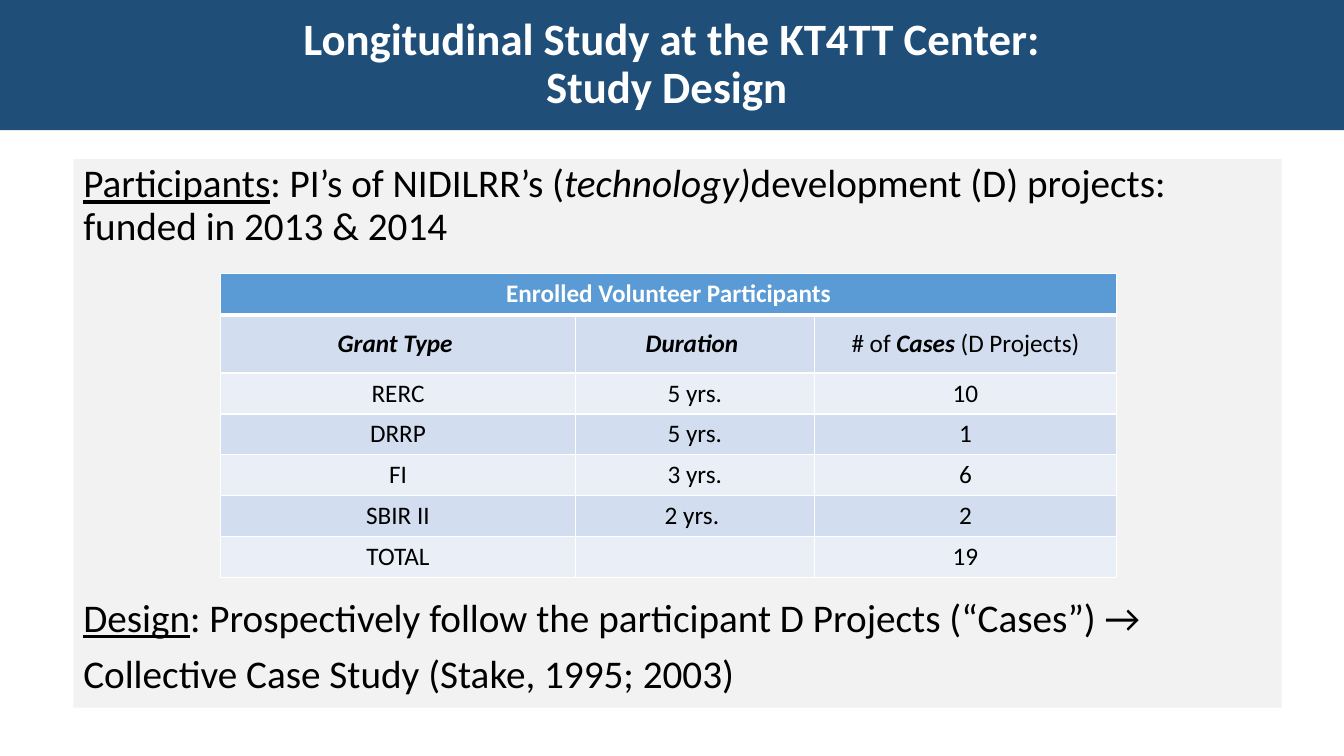
from lxml.etree import SubElement
from pptx import Presentation
from pptx.dml.color import RGBColor
from pptx.enum.shapes import MSO_SHAPE
from pptx.enum.text import MSO_ANCHOR, PP_ALIGN
from pptx.oxml.ns import qn
from pptx.util import Cm, Pt

FONT = "Calibri"
WHITE, BLACK = "FFFFFF", "000000"
BANDS = ["EAEFF7", "D2DEEF"]
COLS = [8.94, 6.02, 7.62]
HEADS = [
    [("Grant Type ", "bi")],
    [("Duration ", "bi")],
    [("# of ", ""), ("Cases ", "bi"), ("(D Projects)", "")],
]
GRANTS = [
    ("RERC", "5 yrs.", "10"),
    ("DRRP", "5 yrs.", "1"),
    ("FI", "3 yrs.", "6"),
    ("SBIR II", "2 yrs. ", "2"),
    ("TOTAL", "", "19"),
]
NOTES = [
    (0, [("Participants", "u"), (": PI’s of NIDILRR’s (", ""),
         ("technology)", "i"),
         ("development (D) projects: funded in 2013 & 2014", "")]),
    (250, [("Design", "u"),
           (": Prospectively follow the participant D Projects (“Cases”) →", "")]),
    (10, [("Collective Case Study (Stake, 1995; 2003)", "")]),
]


def color(code):
    return RGBColor.from_string(code)


def paint(item, code):
    item.fill.solid()
    item.fill.fore_color.rgb = color(code)


def style(run, size, code, marks):
    font = run.font
    font.name, font.size = FONT, Pt(size)
    font.color.rgb = color(code)
    font.bold = "b" in marks
    font.italic = "i" in marks
    font.underline = "u" in marks


def write(para, parts, size, code, align):
    para.alignment = align
    for text, marks in parts:
        run = para.add_run()
        run.text = text
        style(run, size, code, marks)


def add_box(slide, left, top, width, height, fill, anchor):
    box = slide.shapes.add_shape(
        MSO_SHAPE.RECTANGLE, Cm(left), Cm(top), Cm(width), Cm(height))
    box.shadow.inherit = False
    box.line.fill.background()
    paint(box, fill)
    frame = box.text_frame
    frame.word_wrap = True
    frame.vertical_anchor = anchor
    return frame


def add_title(slide, text):
    frame = add_box(slide, 0, 0, 33.87, 3.28, "1F4E79", MSO_ANCHOR.MIDDLE)
    frame.text = text
    para = frame.paragraphs[0]
    para.alignment, para.line_spacing = PP_ALIGN.CENTER, 0.9
    for run in para.runs:
        style(run, 32, WHITE, "b")


def add_notes(slide):
    frame = add_box(slide, 1.85, 4.01, 30.45, 13.82, "F2F2F2", MSO_ANCHOR.TOP)
    for num, (gap, parts) in enumerate(NOTES):
        para = frame.add_paragraph() if num else frame.paragraphs[0]
        para.line_spacing, para.space_before = 0.9, Pt(gap)
        write(para, parts, 28, BLACK, PP_ALIGN.LEFT)


def edge(cell, side, width):
    props = cell._tc.get_or_add_tcPr()
    line = SubElement(props, qn(f"a:ln{side}"), w=str(Pt(width)))
    fill = SubElement(line, qn("a:solidFill"))
    SubElement(fill, qn("a:srgbClr"), val=WHITE)


def fill_cell(cell, row, parts, code, fill):
    for side in "LRTB":
        thick = (row, side) in [(0, "B"), (1, "T")]
        edge(cell, side, 3 if thick else 1)
    paint(cell, fill)
    cell.vertical_anchor = MSO_ANCHOR.MIDDLE if row == 1 else MSO_ANCHOR.TOP
    para = cell.text_frame.paragraphs[0]
    para.font.size = Pt(18)
    write(para, parts, 18, code, PP_ALIGN.CENTER)


def add_grid(slide):
    body = [[[(text, "")] if text else [] for text in grant] for grant in GRANTS]
    rows = [[[("Enrolled Volunteer Participants", "b")], [], []], HEADS] + body
    grid = slide.shapes.add_table(
        len(rows), len(COLS), Cm(5.56), Cm(6.9), Cm(sum(COLS)), Cm(7.69)).table
    for col, width in zip(grid.columns, COLS):
        col.width = Cm(width)
    for num, row in enumerate(rows):
        grid.rows[num].height = Cm(1.47 if num == 1 else 1.03)
        code = BLACK if num else WHITE
        fill = BANDS[num % 2] if num else "5B9BD5"
        for col, parts in enumerate(row):
            fill_cell(grid.cell(num, col), num, parts, code, fill)
    grid.cell(0, 0).merge(grid.cell(0, len(COLS) - 1))


def main():
    deck = Presentation()
    deck.slide_width, deck.slide_height = Cm(33.87), Cm(19.05)
    slide = deck.slides.add_slide(deck.slide_layouts[6])
    add_title(slide, "Longitudinal Study at the KT4TT Center:\vStudy Design ")
    add_notes(slide)
    add_grid(slide)
    deck.save("out.pptx")


if __name__ == "__main__":
    main()
